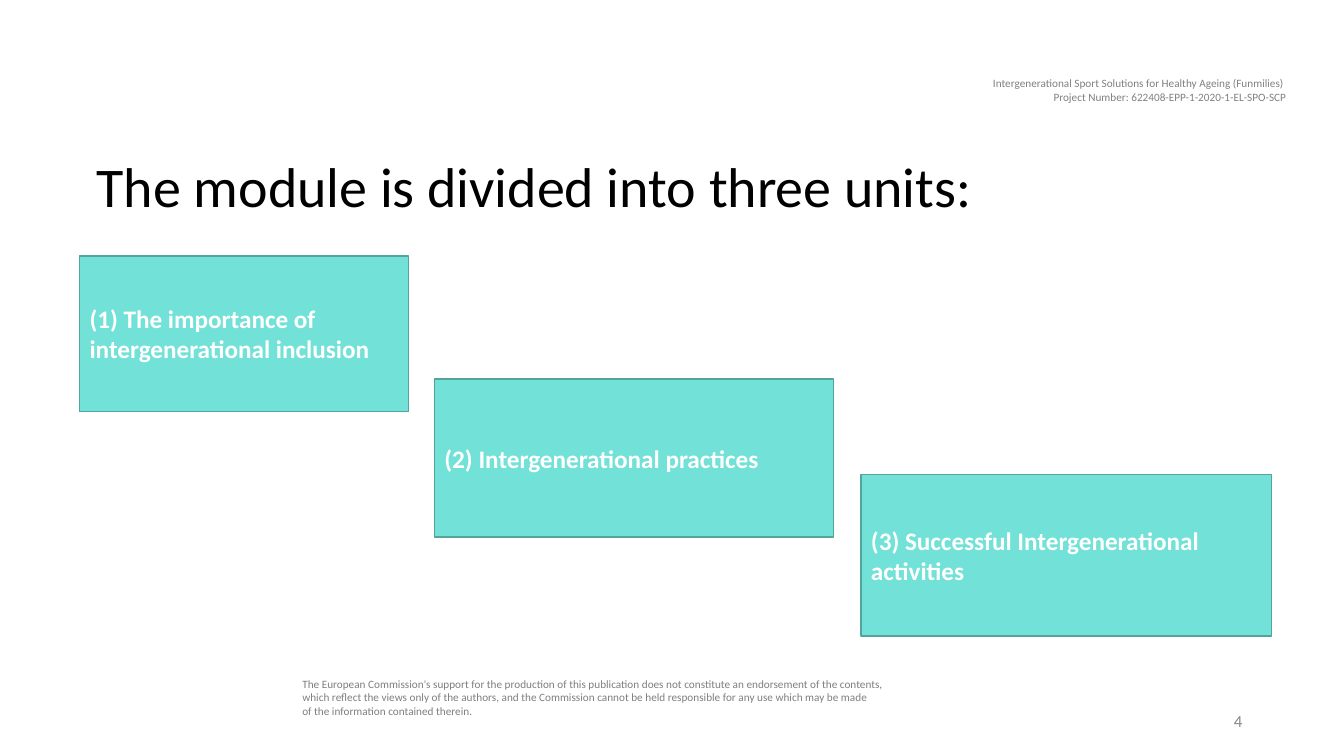
from pptx import Presentation
from pptx.dml.color import RGBColor
from pptx.enum.shapes import MSO_SHAPE
from pptx.enum.text import MSO_ANCHOR, MSO_AUTO_SIZE, PP_ALIGN
from pptx.util import Emu, Pt

RECT = MSO_SHAPE.RECTANGLE
TOP, MID = MSO_ANCHOR.TOP, MSO_ANCHOR.MIDDLE
LEFT, RIGHT = PP_ALIGN.LEFT, PP_ALIGN.RIGHT
FIXED = MSO_AUTO_SIZE.NONE
SCALE = 9144


def px(count):
    return Emu(count * SCALE)


def color(code):
    return RGBColor.from_string(code)


class Deck:
    """Holds the style and the current slide, and draws each kind of element."""

    face = "Calibri"
    fill = "72E1D7"
    edge = "53A49C"

    def __init__(self, width, height):
        self.show = Presentation()
        self.show.slide_width, self.show.slide_height = px(width), px(height)
        self.slide = self.show.slides.add_slide(self.show.slide_layouts[5])

    def text(self, shape, lines, size, ink, bold=False, align=LEFT, anchor=MID, space=1.0):
        frame = shape.text_frame
        para = frame.paragraphs[0]
        for index, line in enumerate(lines):
            if index:
                para.add_line_break()
            para.add_run().text = line
        formats = [
            (frame, {
                "word_wrap": True, "auto_size": FIXED, "vertical_anchor": anchor,
                "margin_left": px(10), "margin_right": px(10),
                "margin_top": px(5), "margin_bottom": px(5),
            }),
            (para, {"alignment": align, "line_spacing": space}),
        ]
        for part, values in formats:
            for name, value in values.items():
                setattr(part, name, value)
        for font in [para.font] + [run.font for run in para.runs]:
            for name, value in {"name": self.face, "size": Pt(size), "bold": bold}.items():
                setattr(font, name, value)
            font.color.rgb = color(ink)

    def title(self, box, line):
        shape = self.slide.shapes.title
        for name, value in zip(("left", "top", "width", "height"), box):
            setattr(shape, name, px(value))
        self.text(shape, [line], 40, "000000", space=0.9)

    def label(self, box, lines, size, ink, **style):
        shape = self.slide.shapes.add_textbox(*map(px, box))
        self.text(shape, lines, size, ink, **style)

    def card(self, box, line):
        shape = self.slide.shapes.add_shape(RECT, *map(px, box))
        shape.shadow.inherit = False
        shape.fill.solid()
        shape.fill.fore_color.rgb = color(self.fill)
        shape.line.color.rgb = color(self.edge)
        shape.line.width = Pt(1)
        self.text(shape, [line], 18, "FFFFFF", bold=True)


def main():
    deck = Deck(1333, 750)
    deck.label((290, 667, 681, 50), [
        "The European Commission's support for the production of this publication does not constitute an endorsement of the contents, ",
        "which reflect the views only of the authors, and the Commission cannot be held responsible for any use which may be made ",
        "of the information contained therein.",
    ], 8, "7F7F7F", anchor=TOP)
    deck.label((619, 71, 667, 37), [
        "Intergenerational Sport Solutions for Healthy Ageing (Funmilies) ",
        "Project Number: 622408-EPP-1-2020-1-EL-SPO-SCP",
    ], 8, "808080", align=RIGHT, anchor=TOP)
    deck.title((86, 149, 1150, 77), "The module is divided into three units:")
    units = [
        ((79, 254, 326, 154), "The importance of intergenerational inclusion"),
        ((431, 376, 396, 157), "Intergenerational practices"),
        ((854, 471, 407, 160), "Successful Intergenerational activities"),
    ]
    for number, (box, name) in enumerate(units, 1):
        deck.card(box, f"({number}) {name}")
    deck.label((942, 695, 300, 40), ["4"], 12, "888888", align=RIGHT)
    deck.show.save("out.pptx")


if __name__ == "__main__":
    main()
